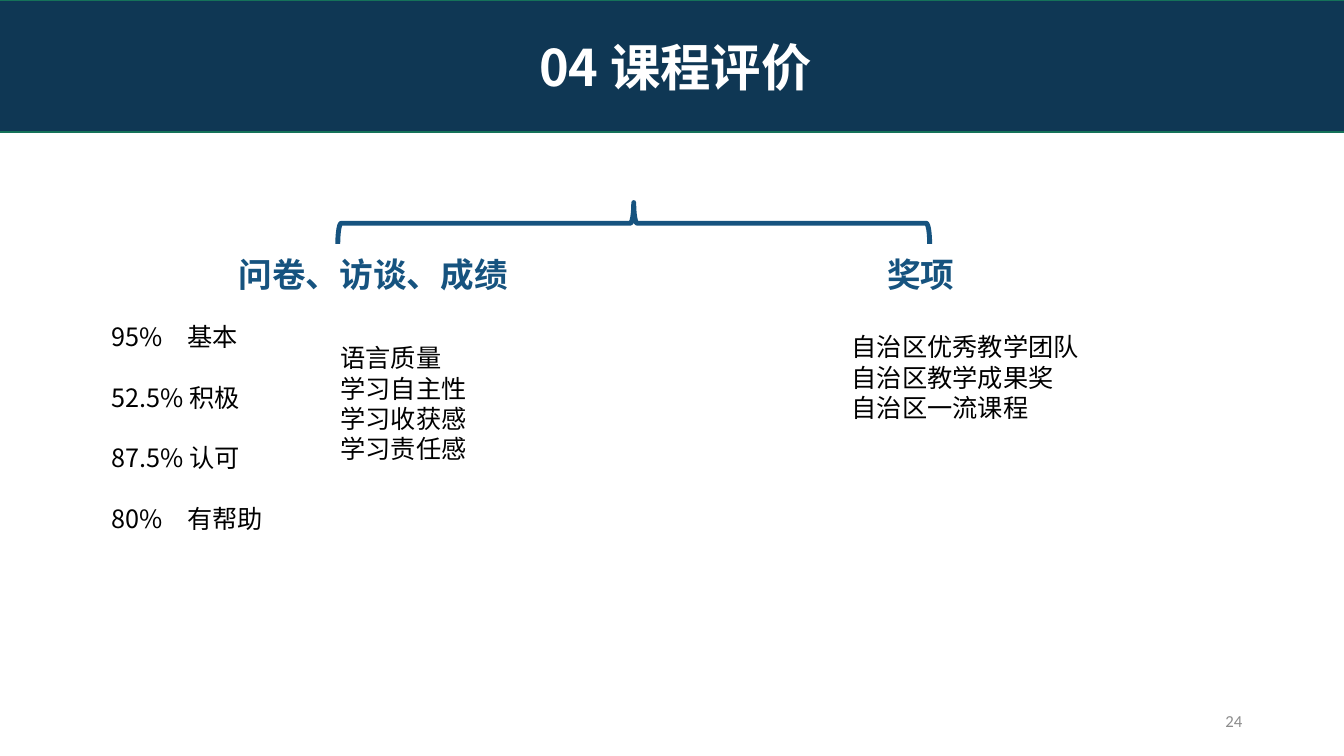
from dataclasses import dataclass

from lxml.etree import SubElement
from pptx import Presentation
from pptx.dml.color import RGBColor
from pptx.enum.shapes import MSO_SHAPE
from pptx.enum.text import MSO_ANCHOR, PP_ALIGN
from pptx.oxml.ns import qn
from pptx.util import Inches, Pt

COLORS = {
    "navy": "0F3754",
    "blue": "16537F",
    "green": "157259",
    "gray": "8C8C8C",
    "black": "000000",
    "white": "FFFFFF",
}
FONT = "Noto Sans CJK SC"


@dataclass
class TextBlock:
    left: float
    top: float
    width: float
    height: float
    lines: list[str]
    size: int = 18
    color: str = "black"
    bold: bool = False
    font: str = FONT
    align: PP_ALIGN = PP_ALIGN.LEFT
    anchor: MSO_ANCHOR = MSO_ANCHOR.TOP
    wrap: bool = True
    gap: float = 0
    tab: float = 0


BLOCKS = [
    TextBlock(2.27, 2.47, 2.9, 0.5, ["问卷、访谈、成绩"], size=24, color="blue", bold=True),
    TextBlock(8.7, 2.47, 2.67, 0.5, ["奖项"], size=24, color="blue", bold=True),
    TextBlock(1.01, 3.14, 1.72, 2.22,
              ["95%\t基本", "52.5% 积极", "87.5% 认可", "80%\t有帮助"], gap=21.6, tab=0.75),
    TextBlock(3.28, 3.35, 1.46, 1.31,
              ["语言质量", "学习自主性", "学习收获感", "学习责任感"], wrap=False),
    TextBlock(8.35, 3.24, 2.47, 1.01,
              ["自治区优秀教学团队", "自治区教学成果奖", "自治区一流课程"], wrap=False),
    TextBlock(9.42, 6.95, 3, 0.4, ["24"], size=12, color="gray", font="Calibri",
              align=PP_ALIGN.RIGHT, anchor=MSO_ANCHOR.MIDDLE),
]


def rgb(name: str) -> RGBColor:
    return RGBColor.from_string(COLORS[name])


def write_text(tf, lines: list[str], *, size: int, color: str, bold: bool = False,
               font: str = FONT, align: PP_ALIGN = PP_ALIGN.LEFT,
               anchor: MSO_ANCHOR = MSO_ANCHOR.TOP, wrap: bool = True,
               gap: float = 0, tab: float = 0) -> None:
    tf.word_wrap = wrap
    tf.vertical_anchor = anchor
    for i, line in enumerate(lines):
        p = tf.paragraphs[0] if i == 0 else tf.add_paragraph()
        p.alignment = align
        p.space_after = Pt(gap)
        if tab:
            tabs = SubElement(p._p.get_or_add_pPr(), qn("a:tabLst"))
            SubElement(tabs, qn("a:tab"), pos=str(Inches(tab)), algn="l")
        r = p.add_run()
        r.text = line
        r.font.size = Pt(size)
        r.font.bold = bold
        r.font.name = font
        r.font.color.rgb = rgb(color)
        SubElement(r._r.get_or_add_rPr(), qn("a:ea"), typeface=font)


def add_block(slide, block: TextBlock) -> None:
    sp = slide.shapes.add_textbox(Inches(block.left), Inches(block.top),
                                  Inches(block.width), Inches(block.height))
    write_text(sp.text_frame, block.lines, size=block.size, color=block.color,
               bold=block.bold, font=block.font, align=block.align,
               anchor=block.anchor, wrap=block.wrap, gap=block.gap, tab=block.tab)


def add_outlined(slide, kind: MSO_SHAPE, left: float, top: float, width: float,
                 height: float, *, line: str, weight: float, fill: str = ""):
    sp = slide.shapes.add_shape(kind, Inches(left), Inches(top),
                                Inches(width), Inches(height))
    sp.shadow.inherit = False
    if fill:
        sp.fill.solid()
        sp.fill.fore_color.rgb = rgb(fill)
    else:
        sp.fill.background()
    sp.line.color.rgb = rgb(line)
    sp.line.width = Pt(weight)
    return sp


def main() -> None:
    prs = Presentation()
    prs.slide_width = Inches(13.33)
    prs.slide_height = Inches(7.5)
    slide = prs.slides.add_slide(prs.slide_layouts[6])

    brace = add_outlined(slide, MSO_SHAPE.LEFT_BRACE, 6.08, -0.72, 0.41, 5.87,
                         line="blue", weight=3.5)
    brace.rotation = 90

    banner = add_outlined(slide, MSO_SHAPE.RECTANGLE, -0.02, 0, 13.44, 1.31,
                          line="green", weight=1, fill="navy")
    write_text(banner.text_frame, ["04 课程评价"], size=36, color="white", bold=True,
               align=PP_ALIGN.CENTER, anchor=MSO_ANCHOR.MIDDLE)

    for block in BLOCKS:
        add_block(slide, block)

    prs.save("out.pptx")


if __name__ == "__main__":
    main()
